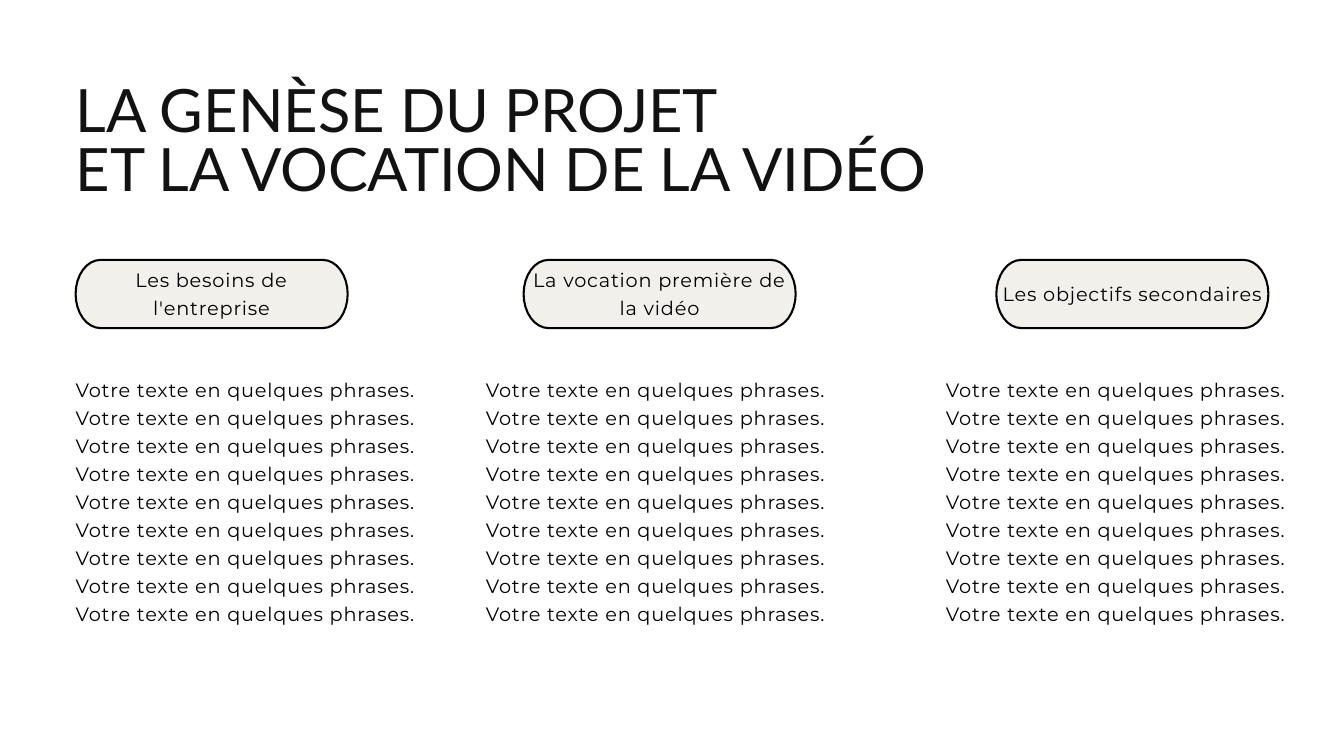
"""Build the slide on the origin of the project and the purpose of the video."""
import math

from pptx import Presentation
from pptx.dml.color import RGBColor
from pptx.enum import text
from pptx.oxml import ns
from pptx.util import Pt

TITLE = ["LA GENÈSE DU PROJET", "ET LA VOCATION DE LA VIDÉO"]
SENTENCE = "Votre texte en quelques phrases."
SENTENCE_COUNT = 9
COLUMNS = [
    {"heading": "Les besoins de l'entreprise", "pill_left": 81, "body_left": 81},
    {"heading": "La vocation première de la vidéo", "pill_left": 561, "body_left": 520.5},
    {"heading": "Les objectifs secondaires", "pill_left": 1067.5, "body_left": 1013.5},
]

INK = RGBColor(0x12, 0x12, 0x12)
BLACK = RGBColor(0, 0, 0)
CREAM = RGBColor(0xF1, 0xF0, 0xEA)

MARGIN = 81
PILL_TOP, PILL_WIDTH, PILL_HEIGHT, CORNER_WIDTH = 278.5, 291.5, 73, 26.5
BODY_TOP, BODY_WIDTH, BODY_HEIGHT = 400.5, 399, 328
ARC_STEPS = 16


def write(frame, lines, font_name, size, color, leading, align, spacing=0):
    frame.word_wrap = True
    frame.text = "\n".join(lines)
    for paragraph in frame.paragraphs:
        paragraph.alignment = align
        paragraph.line_spacing = Pt(leading)
        paragraph.space_before = Pt(0)
        font = paragraph.font
        font.name, font.size = font_name, Pt(size)
        font.color.rgb = color
        if spacing:
            defaults = paragraph._p.pPr.find(ns.qn("a:defRPr"))
            defaults.set("spc", str(round(spacing * 100)))


def set_insets(frame, side=0, top=0, bottom=0):
    frame.margin_left = frame.margin_right = Pt(side)
    frame.margin_top, frame.margin_bottom = Pt(top), Pt(bottom)


def pill_outline(left):
    half_height = PILL_HEIGHT / 2
    middle = PILL_TOP + half_height
    points = []
    for center, start in (
        (left + PILL_WIDTH - CORNER_WIDTH, -math.pi / 2),
        (left + CORNER_WIDTH, math.pi / 2),
    ):
        for step in range(ARC_STEPS + 1):
            angle = start + math.pi * step / ARC_STEPS
            points.append((Pt(center + CORNER_WIDTH * math.cos(angle)),
                           Pt(middle + half_height * math.sin(angle))))
    return points


def add_pill(slide, heading, left):
    first, *others = pill_outline(left)
    builder = slide.shapes.build_freeform(*first)
    builder.add_line_segments(others, close=True)
    pill = builder.convert_to_shape()
    pill.shadow.inherit = False
    pill.fill.solid()
    pill.fill.fore_color.rgb = CREAM
    pill.line.color.rgb = BLACK
    pill.line.width = Pt(2.25)
    frame = pill.text_frame
    set_insets(frame, side=4.3, bottom=6.5)
    frame.vertical_anchor = text.MSO_ANCHOR.MIDDLE
    write(frame, [heading], "Montserrat", 20.7, BLACK, 30, text.PP_ALIGN.CENTER, 0.9)


def add_body(slide, left):
    body = slide.shapes.add_textbox(Pt(left), Pt(BODY_TOP), Pt(BODY_WIDTH), Pt(BODY_HEIGHT))
    set_insets(body.text_frame)
    write(body.text_frame, [SENTENCE] * SENTENCE_COUNT, "Montserrat", 20.7, BLACK, 30,
          text.PP_ALIGN.LEFT, 0.9)


def main():
    deck = Presentation()
    deck.slide_width, deck.slide_height = Pt(1440), Pt(810)
    slide = deck.slides.add_slide(deck.slide_layouts[5])

    title = slide.shapes.title
    title.left, title.top = Pt(MARGIN), Pt(90.5)
    title.width, title.height = Pt(1278), Pt(197.5)
    set_insets(title.text_frame)
    title.text_frame.auto_size = text.MSO_AUTO_SIZE.NONE
    title.text_frame.vertical_anchor = text.MSO_ANCHOR.TOP
    write(title.text_frame, TITLE, "Lato", 64, INK, 64, text.PP_ALIGN.LEFT)

    for column in COLUMNS:
        add_pill(slide, column["heading"], column["pill_left"])
        add_body(slide, column["body_left"])

    deck.save("out.pptx")


if __name__ == "__main__":
    main()
